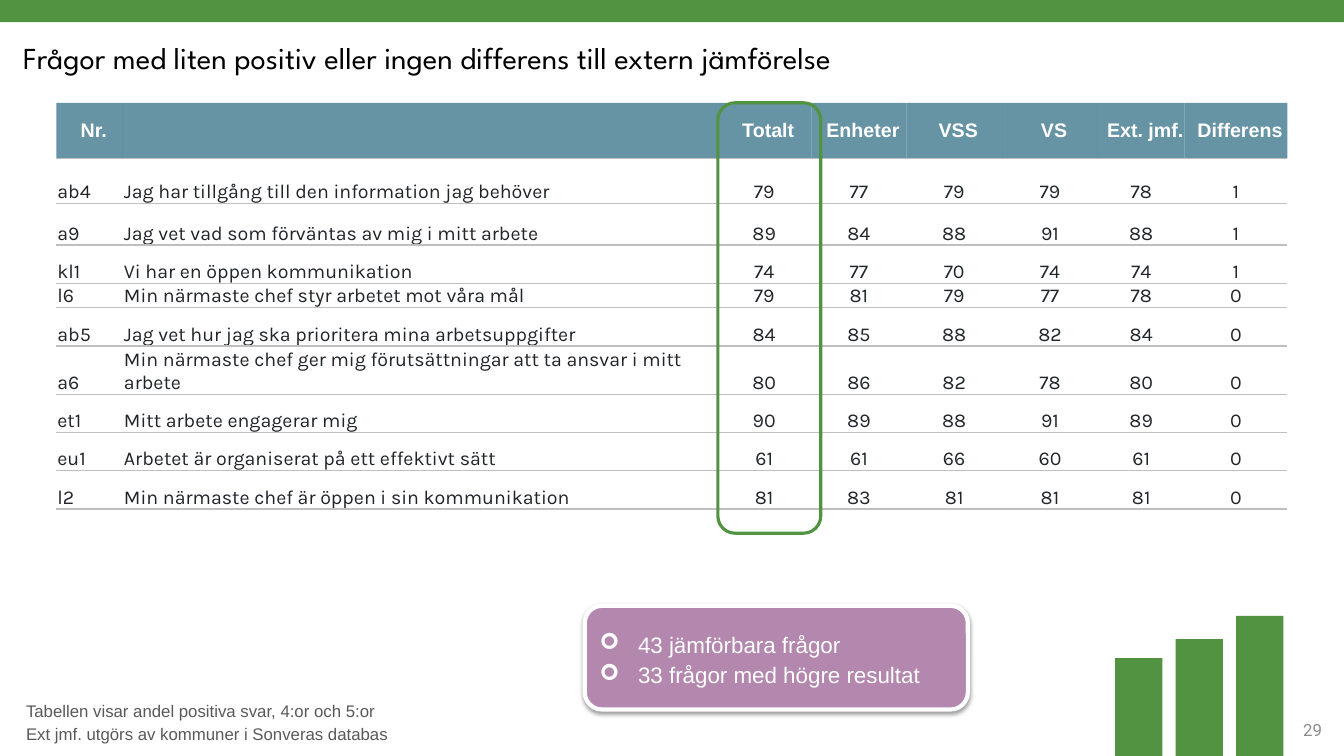
from dataclasses import dataclass

from lxml import etree
from pptx import Presentation
from pptx.dml.color import RGBColor
from pptx.enum.shapes import MSO_SHAPE
from pptx.enum.text import MSO_ANCHOR, PP_ALIGN
from pptx.oxml.ns import qn
from pptx.util import Pt

RECT, ROUND = MSO_SHAPE.RECTANGLE, MSO_SHAPE.ROUNDED_RECTANGLE
LEFT, CENTER, RIGHT = PP_ALIGN.LEFT, PP_ALIGN.CENTER, PP_ALIGN.RIGHT
TOP, MIDDLE, BOTTOM = MSO_ANCHOR.TOP, MSO_ANCHOR.MIDDLE, MSO_ANCHOR.BOTTOM
EMU_PER_PX = 9144
NO_GRID_STYLE = "{2D5ABB26-0587-4C30-8999-92F81FD0307C}"


@dataclass(frozen=True)
class Style:
    font: str
    size: float
    color: str
    bold: bool = False


@dataclass(frozen=True)
class Theme:
    green: str = "529341"
    purple: str = "B387AE"
    white: str = "FFFFFF"
    header_fill: str = "427A8E"
    rule: str = "BFBFBF"
    title: Style = Style("League Spartan", 21.8, "000000")
    header: Style = Style("Arial", 14, "FFFFFF", True)
    cell: Style = Style("Karla", 14, "212529")
    note: Style = Style("Arial", 12, "595959")
    callout: Style = Style("Arial", 16, "FFFFFF")
    number: Style = Style("Roboto", 12, "8C8C8C")


THEME = Theme()
HEADERS = ["Nr.", "", "Totalt", "Enheter", "VSS", "VS", "Ext. jmf.", "Differens"]
QUESTIONS = [
    ("ab4", "Jag har tillgång till den information jag behöver", 79, 77, 79, 79, 78, 1),
    ("a9", "Jag vet vad som förväntas av mig i mitt arbete", 89, 84, 88, 91, 88, 1),
    ("kl1", "Vi har en öppen kommunikation", 74, 77, 70, 74, 74, 1),
    ("l6", "Min närmaste chef styr arbetet mot våra mål", 79, 81, 79, 77, 78, 0),
    ("ab5", "Jag vet hur jag ska prioritera mina arbetsuppgifter", 84, 85, 88, 82, 84, 0),
    ("a6", "Min närmaste chef ger mig förutsättningar att ta ansvar i mitt arbete",
     80, 86, 82, 78, 80, 0),
    ("et1", "Mitt arbete engagerar mig", 90, 89, 88, 91, 89, 0),
    ("eu1", "Arbetet är organiserat på ett effektivt sätt", 61, 61, 66, 60, 61, 0),
    ("l2", "Min närmaste chef är öppen i sin kommunikation", 81, 83, 81, 81, 81, 0),
]
COL_WIDTHS = [66, 589, 94, 94, 95, 95, 86, 102]
ROW_HEIGHTS = [55, 45, 41, 38, 9, 38, 38, 38, 38, 38]
BAR_HEIGHTS = [97, 116, 139]


def px(n):
    return n * EMU_PER_PX


def rgb(color):
    return RGBColor.from_string(color)


def add_run(p, text, style):
    r = p.add_run()
    r.text = text
    r.font.name = style.font
    r.font.size = Pt(style.size)
    r.font.bold = style.bold
    r.font.color.rgb = rgb(style.color)


def add_lines(tf, lines, style, align=LEFT, anchor=TOP, gap=0):
    tf.word_wrap = True
    tf.vertical_anchor = anchor
    for i, line in enumerate(lines):
        p = tf.add_paragraph() if i else tf.paragraphs[0]
        p.alignment = align
        if i and gap:
            p.space_before = Pt(gap)
        add_run(p, line, style)


def add_text(s, x, y, w, h, lines, style, **layout):
    sp = s.shapes.add_textbox(px(x), px(y), px(w), px(h))
    add_lines(sp.text_frame, lines, style, **layout)


def add_box(s, kind, x, y, w, h, fill=None, line=None, line_width=0):
    sp = s.shapes.add_shape(kind, px(x), px(y), px(w), px(h))
    sp.shadow.inherit = False
    if fill:
        sp.fill.solid()
        sp.fill.fore_color.rgb = rgb(fill)
    else:
        sp.fill.background()
    if line:
        sp.line.color.rgb = rgb(line)
        sp.line.width = Pt(line_width)
    else:
        sp.line.fill.background()
    return sp


def set_title(s, text):
    sp = s.shapes.title
    sp.left, sp.top, sp.width, sp.height = px(13), px(29), px(967), px(55)
    add_lines(sp.text_frame, [text], THEME.title, anchor=MIDDLE)


def add_color(parent, color, alpha=100):
    clr = etree.SubElement(parent, qn("a:srgbClr"), val=color)
    etree.SubElement(clr, qn("a:alpha"), val=str(alpha * 1000))


def set_bottom_rule(cell):
    ln = etree.Element(qn("a:lnB"), w=str(Pt(1)))
    add_color(etree.SubElement(ln, qn("a:solidFill")), THEME.rule)
    cell._tc.get_or_add_tcPr().insert(0, ln)


def fill_cell(cell, text, style, align, anchor, left):
    cell.margin_left, cell.margin_right = px(left), px(1)
    cell.margin_top, cell.margin_bottom = px(1), 0
    cell.vertical_anchor = anchor
    p = cell.text_frame.paragraphs[0]
    p.alignment = align
    if text:
        add_run(p, text, style)
    set_bottom_rule(cell)


def add_header_cell(cell, text):
    fill_cell(cell, text, THEME.header, CENTER, MIDDLE, 9)
    fill = etree.SubElement(cell._tc.tcPr, qn("a:solidFill"))
    add_color(fill, THEME.header_fill, 80)


def add_body_cell(cell, value, align):
    fill_cell(cell, str(value), THEME.cell, align, BOTTOM, 1)
    cell.fill.background()


def add_question_table(s, x, y):
    frame = s.shapes.add_table(len(ROW_HEIGHTS), len(COL_WIDTHS), px(x), px(y),
                               px(sum(COL_WIDTHS)), px(sum(ROW_HEIGHTS)))
    table = frame.table
    table.horz_banding = False
    table._tbl.tblPr.find(qn("a:tableStyleId")).text = NO_GRID_STYLE
    for col, width in zip(table.columns, COL_WIDTHS):
        col.width = px(width)
    for row, height in zip(table.rows, ROW_HEIGHTS):
        row.height = px(height)
    for c, text in enumerate(HEADERS):
        add_header_cell(table.cell(0, c), text)
    for r, question in enumerate(QUESTIONS, 1):
        for c, value in enumerate(question):
            add_body_cell(table.cell(r, c), value, LEFT if c < 2 else CENTER)


def add_callout(s, x, y, w, h, lines):
    sp = add_box(s, ROUND, x, y, w, h, THEME.purple, THEME.white, 3)
    effects = sp._element.spPr.find(qn("a:effectLst"))
    shadow = etree.SubElement(effects, qn("a:outerShdw"), blurRad=str(Pt(3.1)),
                              dist=str(Pt(1.6)), dir="5400000", rotWithShape="0")
    add_color(shadow, "000000", 38)
    add_lines(sp.text_frame, lines, THEME.callout, anchor=MIDDLE)
    for p in sp.text_frame.paragraphs:
        p.line_spacing = 1.14
        pPr = p._p.get_or_add_pPr()
        pPr.set("marL", str(px(38)))
        pPr.set("indent", str(px(-38)))
        etree.SubElement(pPr, qn("a:buFont"), typeface="Wingdings")
        etree.SubElement(pPr, qn("a:buChar"), char="➢")


def main():
    prs = Presentation()
    prs.slide_width, prs.slide_height = px(1333), px(750)
    s = prs.slides.add_slide(prs.slide_layouts[5])
    add_box(s, RECT, 0, 0, 1333, 22, THEME.green)
    for i, height in enumerate(BAR_HEIGHTS):
        add_box(s, RECT, 1106 + 60 * i, 750 - height, 47, height, THEME.green)
    set_title(s, "Frågor med liten positiv eller ingen differens till extern jämförelse")
    add_text(s, 1249, 704, 72, 40, ["29"], THEME.number, align=RIGHT, anchor=MIDDLE)
    add_question_table(s, 56, 102)
    add_text(s, 16, 690, 388, 55,
             ["Tabellen visar andel positiva svar, 4:or och 5:or",
              "Ext jmf. utgörs av kommuner i Sonveras databas"], THEME.note, gap=2.4)
    add_callout(s, 580, 601, 380, 103,
                ["43 jämförbara frågor", "33 frågor med högre resultat"])
    add_box(s, ROUND, 712, 102, 102, 427, line=THEME.green, line_width=2.25)
    prs.save("out.pptx")


if __name__ == "__main__":
    main()
